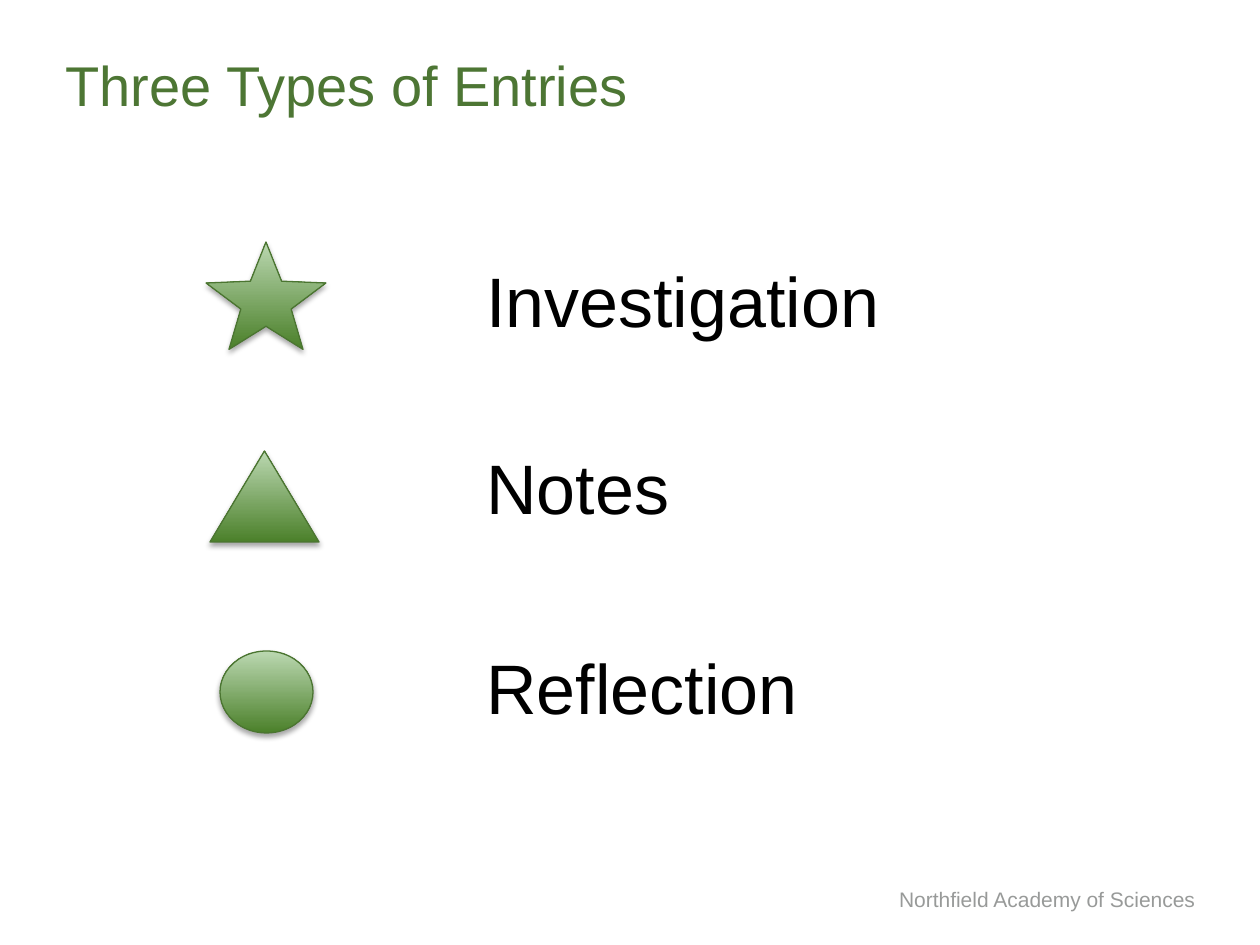
from lxml import etree
from pptx import Presentation
from pptx import util as u
from pptx.dml.color import RGBColor
from pptx.enum import shapes, text
from pptx.oxml.ns import qn

PX = u.Inches(1) / 126
FONT = "Arial"
COLORS = {"title": "4D7634", "label": "000000", "footer": "989A99",
          "dark": "4B802A", "light": "BBD8B1", "edge": "4B7531", "shadow": "000000"}

# Content: label, label top, symbol kind, symbol box, symbol adjustments
TITLE = "Three Types of Entries"
FOOTER = "Northfield Academy of Sciences"
KIND = shapes.MSO_SHAPE
ENTRIES = [
    ("Investigation", 251, KIND.STAR_5_POINT, (206, 242, 120, 107), (0.21, 1.05, 1.11)),
    ("Notes", 438, KIND.ISOSCELES_TRIANGLE, (210, 451, 109, 91), ()),
    ("Reflection", 638, KIND.OVAL, (220, 651, 93, 82), ()),
]
LABEL_LEFT, LABEL_W, LABEL_H, LABEL_INDENT = 411, 598, 97, 63


def px(*values):
    return [u.Emu(round(v * PX)) for v in values]


def rgb(name):
    return RGBColor.from_string(COLORS[name])


def add_text(slide, box, words, size, color, align=text.PP_ALIGN.LEFT,
             anchor=text.MSO_ANCHOR.TOP):
    tf = slide.shapes.add_textbox(*px(*box)).text_frame
    tf.word_wrap = True
    tf.vertical_anchor = anchor
    p = tf.paragraphs[0]
    p.text = words
    p.alignment = align
    p.font.name, p.font.size = FONT, u.Pt(size)
    p.font.color.rgb = rgb(color)
    return p


def add_symbol(slide, kind, box, adjustments):
    sp = slide.shapes.add_shape(kind, *px(*box))
    for i, value in enumerate(adjustments):
        sp.adjustments[i] = value
    sp.fill.gradient()
    sp.fill.gradient_angle = 90
    for stop, color, position in zip(sp.fill.gradient_stops, ("dark", "light"), (0, 1)):
        stop.color.rgb = rgb(color)
        stop.position = position
    sp.line.color.rgb = rgb("edge")
    sp.line.width = u.Pt(0.75)

    # Soft shadow straight below
    sp.shadow.inherit = False
    effects = sp._element.spPr.find(qn("a:effectLst"))
    shadow = etree.SubElement(effects, qn("a:outerShdw"), blurRad=str(u.Pt(3.1)),
                              dist=str(u.Pt(1.8)), dir="5400000", rotWithShape="0")
    color = etree.SubElement(shadow, qn("a:srgbClr"), val=COLORS["shadow"])
    etree.SubElement(color, qn("a:alpha"), val="35000")


def main():
    prs = Presentation()
    prs.slide_width, prs.slide_height = px(1260, 945)
    slide = prs.slides.add_slide(prs.slide_layouts[6])

    # Footer and title
    add_text(slide, (840, 880, 368, 38), FOOTER, 12, "footer", text.PP_ALIGN.RIGHT)
    add_text(slide, (53, 42, 1071, 84), TITLE, 32, "title", anchor=text.MSO_ANCHOR.MIDDLE)

    # One symbol and one label per entry type
    for label, top, kind, box, adjustments in ENTRIES:
        add_symbol(slide, kind, box, adjustments)
        p = add_text(slide, (LABEL_LEFT, top, LABEL_W, LABEL_H), label, 40, "label")
        p.level = 1
        pPr = p._p.get_or_add_pPr()
        pPr.set("marL", str(px(LABEL_INDENT)[0]))
        pPr.set("indent", "0")

    prs.save("out.pptx")


if __name__ == "__main__":
    main()
